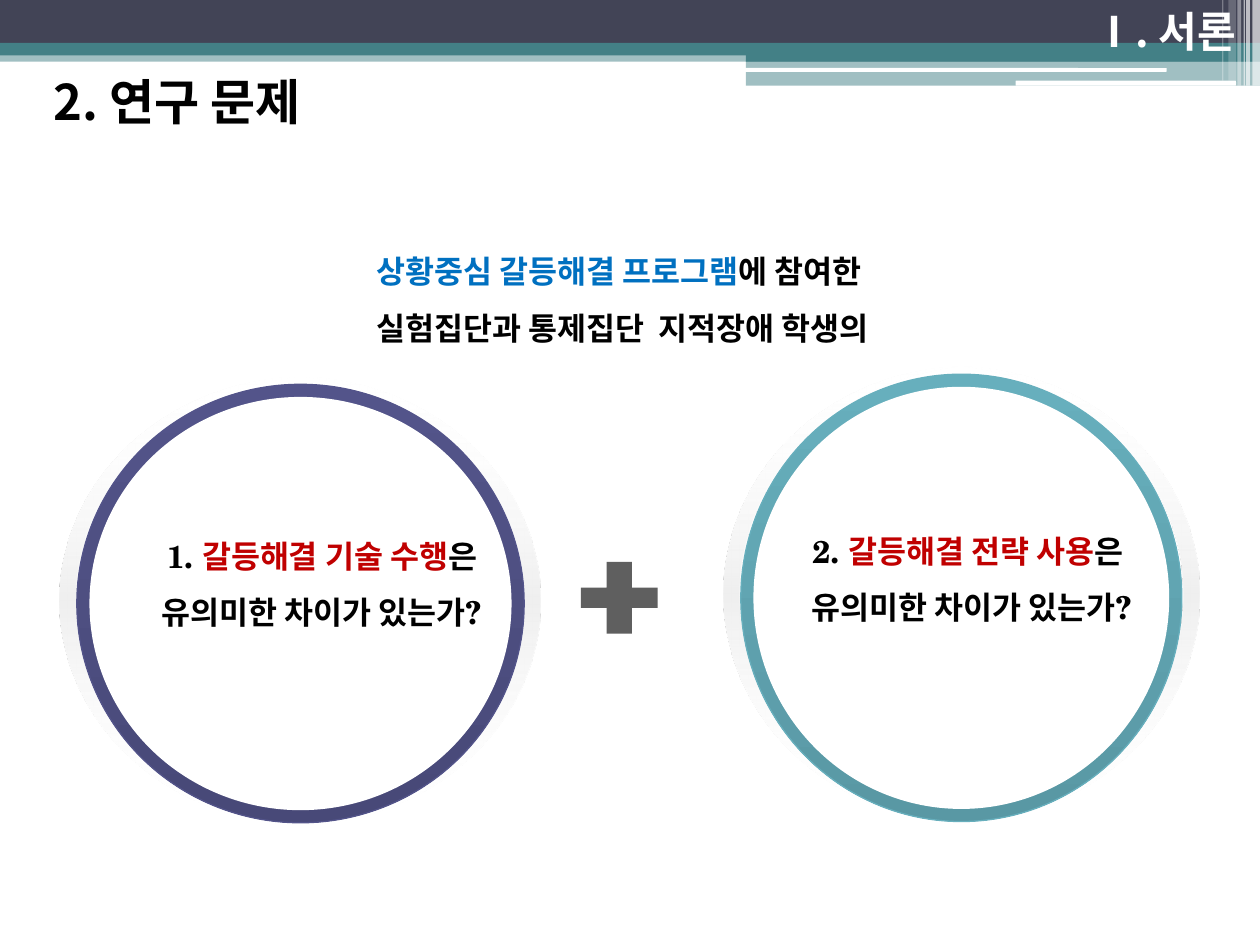
from lxml.etree import SubElement
from pptx import Presentation
from pptx.dml.color import RGBColor
from pptx.enum.shapes import MSO_SHAPE
from pptx.enum.text import MSO_AUTO_SIZE, PP_ALIGN
from pptx.oxml.ns import qn
from pptx.util import Inches, Pt

WHITE = RGBColor(0xFF, 0xFF, 0xFF)
BLACK = RGBColor(0, 0, 0)
NAVY = RGBColor(0x42, 0x44, 0x56)
TEAL = RGBColor(0x43, 0x80, 0x86)
SILVER = RGBColor(0xEF, 0xEF, 0xEF)
GRAY = RGBColor(0x5F, 0x5F, 0x5F)
BLUE = RGBColor(0x00, 0x70, 0xC0)
RED = RGBColor(0xC0, 0x00, 0x00)
VIOLET = RGBColor(0x53, 0x54, 0x8A)
DEEP_VIOLET = RGBColor(0x48, 0x49, 0x78)
AQUA = RGBColor(0x67, 0xAF, 0xBD)
DEEP_AQUA = RGBColor(0x59, 0x98, 0xA4)
SERIF, SANS = "TeX Gyre Schola", "Noto Sans CJK KR"

# (left, top, width, height), colour, opacity in percent
HEADER_BANDS = [
    ((0, 0.4, 10, 0.09), TEAL, 50),
    ((0, 0, 10, 0.34), NAVY, 100),
    ((0, 0.34, 10, 0.1), TEAL, 100),
    ((5.92, 0.39, 4.08, 0.1), TEAL, 100),
    ((5.92, 0.48, 4.08, 0.2), TEAL, 50),
]
HEADER_SLOTS = [(5.91, 0.54, 3.35, 0.03), (8.06, 0.64, 1.75, 0.04)]
# left, width, height, opacity in percent
HEADER_STRIPES = [
    (9.94, 0.06, 0.68, 65), (9.89, 0.03, 0.68, 65), (9.87, 0.01, 0.68, 60),
    (9.82, 0.03, 0.68, 40), (9.75, 0.06, 0.64, 20), (9.7, 0.01, 0.64, 30),
]
MOON_STOPS = [(0, WHITE, 0), (50, SILVER, 100), (100, WHITE, 0)]
# left moon, right moon's left edge, ring, ring colours
RINGS = [
    ((0.47, 2.99, 1.96, 3.55), 2.33, (0.61, 3.05, 3.55, 3.48), (VIOLET, DEEP_VIOLET)),
    ((5.74, 2.91, 1.94, 3.61), 7.58, (5.88, 2.97, 3.5, 3.55), (AQUA, DEEP_AQUA)),
]
RING_BAND = 0.1
PLUS = (4.61, 4.46, 0.61, 0.57)

# place, paragraphs of (text, colour, font) runs, size, alignment, line spacing, hanging indent
TEXTS = [
    ((1.06, 4.06, 2.92, 1.46),
     [[(" 1. ", BLACK, SERIF), ("갈등해결 기술 수행", RED, SERIF), ("은", BLACK, SERIF)],
      [(" 유의미한 차이가 있는가?", BLACK, SERIF)]],
     18, PP_ALIGN.CENTER, 1.5, 0),
    ((6.14, 4.02, 3.14, 1.01),
     [[("2. ", BLACK, SERIF), ("갈등해결 전략 사용", RED, SERIF), ("은 ", BLACK, SERIF)],
      [("유의미한 차이가 있는가?", BLACK, SERIF)]],
     18, PP_ALIGN.CENTER, 1.5, 0),
    ((0.33, 0.52, 5.36, 0.57), [[("2. 연구 문제", BLACK, SANS)]],
     28, PP_ALIGN.LEFT, 1.0, 0),
    ((2.89, 1.8, 4.69, 1.01),
     [[("상황중심 갈등해결 프로그램", BLUE, SERIF), ("에 참여한", BLACK, SERIF)],
      [("실험집단과 통제집단  지적장애 학생의", BLACK, SERIF)]],
     18, PP_ALIGN.LEFT, 1.5, 0.38),
    ((6.01, 0.04, 3.9, 0.46), [[(" ", WHITE, SERIF), ("Ⅰ. 서론", WHITE, SANS)]],
     24, PP_ALIGN.RIGHT, 0.9, 0),
]


def add_plain(slide, kind, place, colour, opacity=100, adjustment=None):
    shape = slide.shapes.add_shape(kind, *map(Inches, place))
    shape.shadow.inherit = False
    shape.line.fill.background()
    shape.fill.solid()
    shape.fill.fore_color.rgb = colour
    if opacity < 100:
        srgb = shape._element.spPr.find(qn("a:solidFill")).find(qn("a:srgbClr"))
        SubElement(srgb, qn("a:alpha"), val=str(opacity * 1000))
    if adjustment is not None:
        shape.adjustments[0] = adjustment
    return shape


def shade_downward(shape, stops):
    """Fill from top to bottom with (position, colour, opacity) stops, in percent."""
    shape.fill.gradient()
    gradient = shape._element.spPr.find(qn("a:gradFill"))
    for child in list(gradient):
        gradient.remove(child)
    stop_list = SubElement(gradient, qn("a:gsLst"))
    for position, colour, opacity in stops:
        stop = SubElement(stop_list, qn("a:gs"), pos=str(position * 1000))
        srgb = SubElement(stop, qn("a:srgbClr"), val=str(colour))
        if opacity < 100:
            SubElement(srgb, qn("a:alpha"), val=str(opacity * 1000))
    SubElement(gradient, qn("a:lin"), ang="5400000", scaled="0")


def add_header(slide):
    for place, colour, opacity in HEADER_BANDS:
        add_plain(slide, MSO_SHAPE.RECTANGLE, place, colour, opacity)
    for place in HEADER_SLOTS:
        add_plain(slide, MSO_SHAPE.ROUNDED_RECTANGLE, place, WHITE, adjustment=0.167)
    for left, width, height, opacity in HEADER_STRIPES:
        add_plain(slide, MSO_SHAPE.RECTANGLE, (left, 0, width, height), WHITE, opacity)


def add_ring(slide, left_moon, right_edge, ring_place, colours):
    for place, flipped in (((right_edge, *left_moon[1:]), True), (left_moon, False)):
        moon = add_plain(slide, MSO_SHAPE.MOON, place, SILVER, adjustment=0.067)
        shade_downward(moon, MOON_STOPS)
        if flipped:
            moon._element.spPr.xfrm.set("flipH", "1")
    upper, lower = colours
    ring = add_plain(slide, MSO_SHAPE.OVAL, ring_place, upper)
    shade_downward(ring, [(0, upper, 100), (100, lower, 100)])
    ring.line.color.rgb = upper
    ring.line.width = Pt(0.75)
    left, top, width, height = ring_place
    disc = (left + RING_BAND, top + RING_BAND,
            width - 2 * RING_BAND, height - 2 * RING_BAND)
    add_plain(slide, MSO_SHAPE.OVAL, disc, WHITE)


def add_text(slide, place, paragraphs, size, alignment, spacing, hanging):
    frame = slide.shapes.add_textbox(*map(Inches, place)).text_frame
    frame.word_wrap = True
    frame.auto_size = MSO_AUTO_SIZE.SHAPE_TO_FIT_TEXT
    for index, runs in enumerate(paragraphs):
        paragraph = frame.add_paragraph() if index else frame.paragraphs[0]
        paragraph.alignment = alignment
        paragraph.line_spacing = spacing
        if hanging:
            properties = paragraph._p.get_or_add_pPr()
            properties.set("marL", str(Inches(hanging)))
            properties.set("indent", str(-Inches(hanging)))
        for text, colour, font in runs:
            run = paragraph.add_run()
            run.text = text
            run.font.size = Pt(size)
            run.font.bold = True
            run.font.name = font
            run.font.color.rgb = colour
            SubElement(run._r.get_or_add_rPr(), qn("a:ea"), typeface=SANS)


def main():
    presentation = Presentation()
    presentation.slide_width, presentation.slide_height = Inches(10), Inches(7.5)
    slide = presentation.slides.add_slide(presentation.slide_layouts[6])
    add_header(slide)
    for ring in RINGS:
        add_ring(slide, *ring)
    add_plain(slide, MSO_SHAPE.CROSS, PLUS, GRAY, adjustment=0.36)
    for text in TEXTS:
        add_text(slide, *text)
    presentation.save("out.pptx")


if __name__ == "__main__":
    main()
